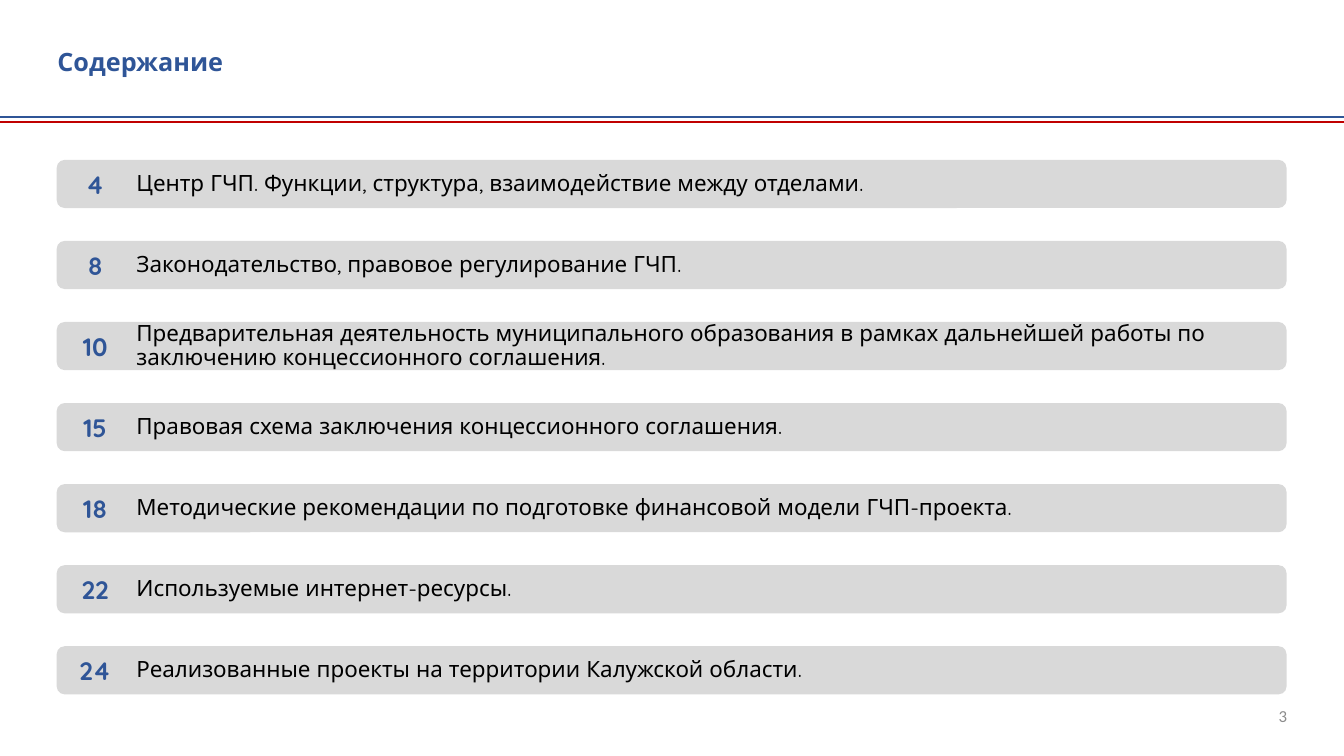
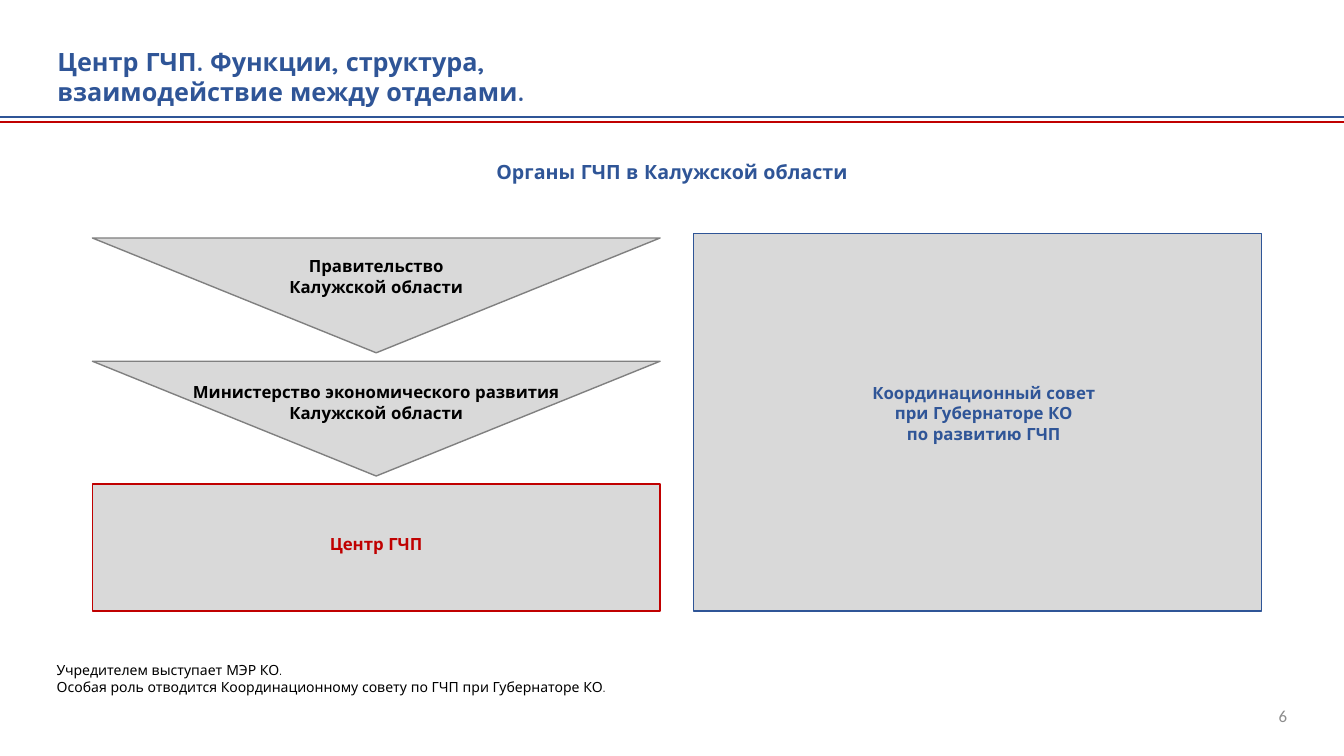
from dataclasses import dataclass

from lxml.etree import SubElement
from pptx import Presentation
from pptx.dml.color import RGBColor
from pptx.enum.shapes import MSO_CONNECTOR, MSO_SHAPE
from pptx.enum.text import MSO_ANCHOR, MSO_AUTO_SIZE, PP_ALIGN
from pptx.oxml.ns import qn
from pptx.slide import Slide
from pptx.text.text import TextFrame
from pptx.util import Pt

BLUE = RGBColor(0x2F, 0x55, 0x97)
RED = RGBColor(0xC0, 0x00, 0x00)
BLACK = RGBColor(0x00, 0x00, 0x00)
PANEL_GREY = RGBColor(0xD9, 0xD9, 0xD9)
OUTLINE_GREY = RGBColor(0x80, 0x80, 0x80)
NUMBER_GREY = RGBColor(0x8C, 0x8C, 0x8C)

SLIDE_WIDTH, SLIDE_HEIGHT = 960, 540
LEFT_MARGIN = 40.5
TITLE_ONLY_LAYOUT = 5


@dataclass(frozen=True)
class Box:
    """A rectangle in points."""
    left: float
    top: float
    width: float
    height: float

    def lengths(self) -> tuple[Pt, Pt, Pt, Pt]:
        return Pt(self.left), Pt(self.top), Pt(self.width), Pt(self.height)


@dataclass(frozen=True)
class TextStyle:
    size: float
    color: RGBColor
    bold: bool = False
    align: PP_ALIGN = PP_ALIGN.LEFT
    anchor: MSO_ANCHOR = MSO_ANCHOR.TOP
    font: str = "Quicksand"
    line_spacing: float = 1.0


@dataclass(frozen=True)
class Insets:
    left: float = 0
    right: float = 0
    bottom: float = 0


@dataclass(frozen=True)
class Section:
    page: int
    name: str


@dataclass(frozen=True)
class Body:
    """An authority: its outline, and its label inside or in a box of its own."""
    outline: MSO_SHAPE
    box: Box
    line: RGBColor
    label: str
    color: RGBColor
    label_box: Box | None = None
    insets: Insets = Insets()


TITLE = TextStyle(18, BLUE, bold=True)
PAGE_NUMBER = TextStyle(12, NUMBER_GREY, align=PP_ALIGN.RIGHT,
                        anchor=MSO_ANCHOR.MIDDLE, font="Calibri")
SECTION_NAME = TextStyle(16, BLACK, anchor=MSO_ANCHOR.MIDDLE, line_spacing=0.9)
SECTION_PAGE = TextStyle(18, BLUE, bold=True, align=PP_ALIGN.CENTER,
                         anchor=MSO_ANCHOR.MIDDLE)
HEADING = TextStyle(14, BLUE, bold=True, align=PP_ALIGN.CENTER)
NOTE = TextStyle(10, BLACK)

SECTIONS = (
    Section(4, "Центр ГЧП. Функции, структура, взаимодействие между отделами."),
    Section(8, "Законодательство, правовое регулирование ГЧП."),
    Section(10, "Предварительная деятельность муниципального образования в рамках "
                "дальнейшей работы по заключению концессионного соглашения."),
    Section(15, "Правовая схема заключения концессионного соглашения."),
    Section(18, "Методические рекомендации по подготовке финансовой модели ГЧП-проекта."),
    Section(22, "Используемые интернет-ресурсы."),
    Section(24, "Реализованные проекты на территории Калужской области."),
)
SECTION_TOP, SECTION_PITCH, SECTION_HEIGHT = 114.2, 57.9, 34.4

COLUMN_LEFT, COLUMN_WIDTH = 66, 405.5
LABEL_LEFT, LABEL_WIDTH = 134.5, 268.5
BODIES = (
    Body(MSO_SHAPE.FLOWCHART_MERGE, Box(COLUMN_LEFT, 170, COLUMN_WIDTH, 82),
         OUTLINE_GREY, "Правительство\nКалужской области", BLACK,
         label_box=Box(LABEL_LEFT, 183, LABEL_WIDTH, 29)),
    Body(MSO_SHAPE.FLOWCHART_MERGE, Box(COLUMN_LEFT, 258, COLUMN_WIDTH, 82),
         OUTLINE_GREY, "Министерство экономического развития\nКалужской области", BLACK,
         label_box=Box(LABEL_LEFT, 273, LABEL_WIDTH, 29)),
    Body(MSO_SHAPE.RECTANGLE, Box(COLUMN_LEFT, 345.7, COLUMN_WIDTH, 90.7),
         RED, "Центр ГЧП", RED, insets=Insets(bottom=5)),
    Body(MSO_SHAPE.RECTANGLE, Box(495.5, 167, COLUMN_WIDTH, 269.4),
         BLUE, "Координационный совет\nпри Губернаторе КО\nпо развитию ГЧП", BLUE,
         insets=Insets(left=9, bottom=13)),
)


def write(frame: TextFrame, text: str, style: TextStyle, insets: Insets = Insets()) -> None:
    frame.text = text
    frame.word_wrap = True
    frame.auto_size = MSO_AUTO_SIZE.NONE
    frame.vertical_anchor = style.anchor
    frame.margin_left, frame.margin_right = Pt(insets.left), Pt(insets.right)
    frame.margin_top, frame.margin_bottom = Pt(0), Pt(insets.bottom)
    for paragraph in frame.paragraphs:
        paragraph.alignment = style.align
        paragraph.line_spacing = style.line_spacing
        paragraph.font.name = style.font
        paragraph.font.size = Pt(style.size)
        paragraph.font.bold = style.bold
        paragraph.font.color.rgb = style.color


def add_text(slide: Slide, box: Box, text: str, style: TextStyle) -> None:
    write(slide.shapes.add_textbox(*box.lengths()).text_frame, text, style)


def add_panel(slide: Slide, outline: MSO_SHAPE, box: Box,
              line: RGBColor | None = None) -> TextFrame:
    """Draw a grey panel and return its text frame."""
    panel = slide.shapes.add_shape(outline, *box.lengths())
    panel.shadow.inherit = False
    panel.fill.solid()
    panel.fill.fore_color.rgb = PANEL_GREY
    if line is None:
        panel.line.fill.background()
    else:
        panel.line.color.rgb = line
        panel.line.width = Pt(1)
    return panel.text_frame


def add_rule(slide: Slide, top: float, color: RGBColor) -> None:
    rule = slide.shapes.add_connector(
        MSO_CONNECTOR.STRAIGHT, Pt(0), Pt(top), Pt(SLIDE_WIDTH), Pt(top))
    rule.line.color.rgb = color
    rule.line.width = Pt(1.5)
    SubElement(rule._element.spPr, qn("a:effectLst"))


def add_framed_slide(deck: Presentation, title: str, number: int) -> Slide:
    """Add a slide with its title, double rule and page number."""
    slide = deck.slides.add_slide(deck.slide_layouts[TITLE_ONLY_LAYOUT])
    heading = slide.shapes.title
    heading.left, heading.top, heading.width, heading.height = Box(41, 33, 737, 44).lengths()
    write(heading.text_frame, title, TITLE)
    add_rule(slide, 83.5, BLUE)
    add_rule(slide, 87.2, RED)
    add_text(slide, Box(703.5, 497, 216, 29), str(number), PAGE_NUMBER)
    return slide


def add_contents_slide(deck: Presentation) -> None:
    slide = add_framed_slide(deck, "Содержание", 3)
    for row, section in enumerate(SECTIONS):
        top = SECTION_TOP + row * SECTION_PITCH
        bar = add_panel(slide, MSO_SHAPE.ROUNDED_RECTANGLE,
                        Box(LEFT_MARGIN, top, 878.5, SECTION_HEIGHT))
        write(bar, section.name, SECTION_NAME, Insets(left=55.3, right=19.7))
        add_text(slide, Box(53, top, 30, SECTION_HEIGHT), str(section.page), SECTION_PAGE)


def add_authorities_slide(deck: Presentation) -> None:
    slide = add_framed_slide(
        deck, "Центр ГЧП. Функции, структура,\nвзаимодействие между отделами.", 6)
    add_text(slide, Box(330, 114.5, 300, 17), "Органы ГЧП в Калужской области", HEADING)
    for body in BODIES:
        label = add_panel(slide, body.outline, body.box, body.line)
        anchor = MSO_ANCHOR.TOP if body.label_box else MSO_ANCHOR.MIDDLE
        style = TextStyle(12, body.color, bold=True, align=PP_ALIGN.CENTER, anchor=anchor)
        if body.label_box:
            add_text(slide, body.label_box, body.label, style)
        else:
            write(label, body.label, style, body.insets)
    add_text(slide, Box(LEFT_MARGIN, 472.3, 481, 24.5),
             "Учредителем выступает МЭР КО.\n"
             "Особая роль отводится Координационному совету по ГЧП при Губернаторе КО.", NOTE)


def main() -> None:
    deck = Presentation()
    deck.slide_width, deck.slide_height = Pt(SLIDE_WIDTH), Pt(SLIDE_HEIGHT)
    add_contents_slide(deck)
    add_authorities_slide(deck)
    deck.save("out.pptx")


if __name__ == "__main__":
    main()
